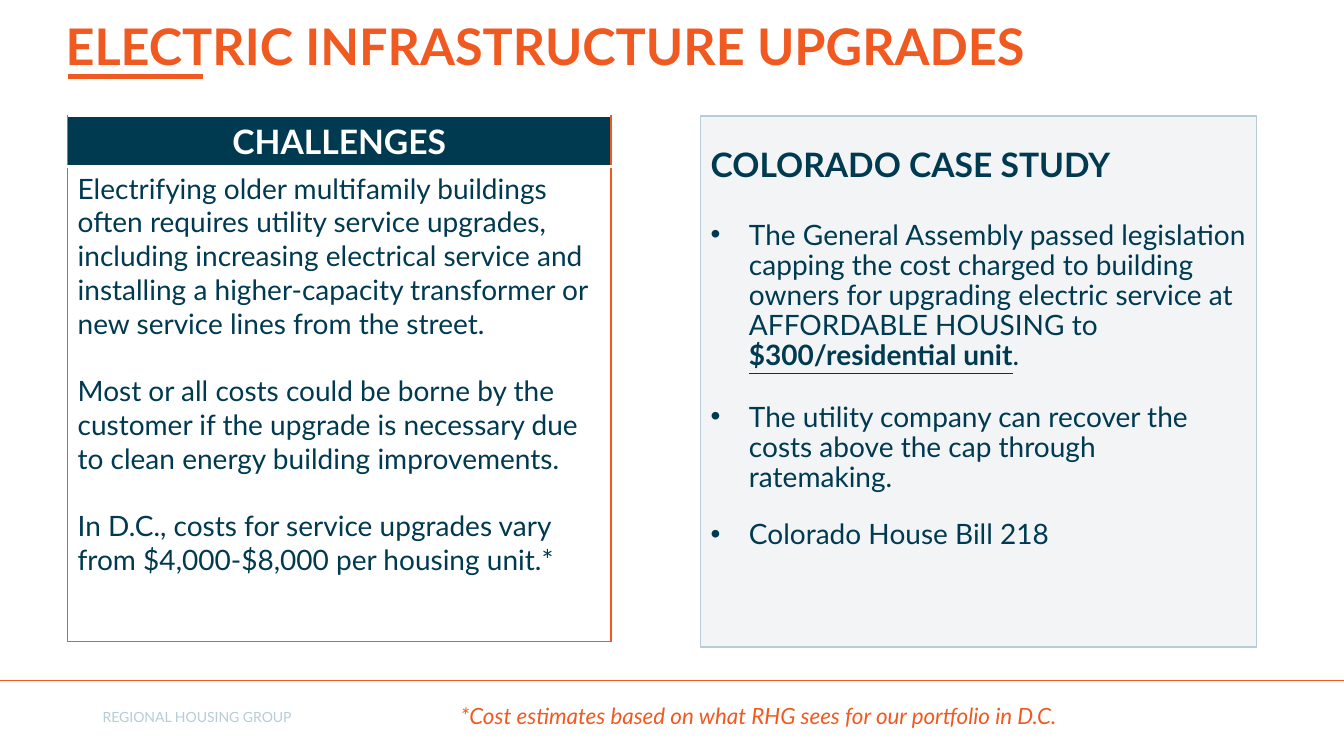
"""Build the slide on electric infrastructure upgrades."""
from dataclasses import dataclass

from lxml.etree import SubElement
from pptx import Presentation
from pptx.dml.color import RGBColor
from pptx.enum.shapes import MSO_CONNECTOR as Connector, MSO_SHAPE as Shape
from pptx.enum.text import MSO_ANCHOR as Anchor, MSO_AUTO_SIZE as AutoSize, PP_ALIGN as Align
from pptx.oxml.ns import qn
from pptx.util import Inches, Pt

COLORS = {"orange": "F05A21", "rule": "F15922", "navy": "003A51",
          "mist": "B6CCD6", "white": "FFFFFF"}
FONT = "Lato"


@dataclass
class Rule:
    left: float
    right: float
    top: float
    color: str
    weight: float


@dataclass
class Label:
    text: str
    box: tuple[float, float, float, float]
    size: float
    color: str
    italic: bool = False


@dataclass
class Bullet:
    runs: list[tuple[str, bool]]
    gap: float


RULES = [Rule(0, 13.33, 6.75, "rule", 0.5), Rule(0.67, 2.01, 0.76, "orange", 3)]
LABELS = [
    Label("REGIONAL HOUSING GROUP", (0.92, 6.95, 4.5, 0.33), 10, "mist"),
    Label("*Cost estimates based on what RHG sees for our portfolio in D.C.",
          (4.47, 6.91, 9.4, 0.37), 16, "orange", True),
]
CHALLENGES = [
    "Electrifying older multifamily buildings often requires utility service upgrades, "
    "including increasing electrical service and installing a higher-capacity transformer "
    "or new service lines from the street.",
    "Most or all costs could be borne by the customer if the upgrade is necessary due to "
    "clean energy building improvements.",
    "In D.C., costs for service upgrades vary from $4,000-$8,000 per housing unit.*",
]
CASE_STUDY = [
    Bullet([("The General Assembly passed legislation capping the cost charged to building "
             "owners for upgrading electric service at AFFORDABLE HOUSING to ", False),
            ("$300/residential unit", True), (".", False)], 26),
    Bullet([("The utility company can recover the costs above the cap through ratemaking.",
             False)], 22),
    Bullet([("Colorado House Bill 218", False)], 19),
]


def rgb(color: str) -> RGBColor:
    """Return a named colour."""
    return RGBColor.from_string(COLORS[color])


def write(paragraph, text: str, *, size: float, color: str, bold: bool = False,
          italic: bool = False, underline: bool = False, align=Align.LEFT,
          spacing: float = 1.0, before: float = 0) -> None:
    """Add formatted text to a paragraph."""
    paragraph.alignment = align
    paragraph.line_spacing = spacing
    paragraph.space_before = Pt(before)
    run = paragraph.add_run()
    run.text = text
    font = run.font
    font.name, font.size = FONT, Pt(size)
    font.bold, font.italic, font.underline = bold, italic, underline
    font.color.rgb = rgb(color)


def add_rule(slide, rule: Rule) -> None:
    """Draw a horizontal rule."""
    line = slide.shapes.add_connector(
        Connector.STRAIGHT, *map(Inches, (rule.left, rule.top, rule.right, rule.top)))
    line.line.color.rgb = rgb(rule.color)
    line.line.width = Pt(rule.weight)
    SubElement(line._element.spPr, qn("a:effectLst"))


def add_label(slide, label: Label) -> None:
    """Add a single-line caption."""
    frame = slide.shapes.add_textbox(*map(Inches, label.box)).text_frame
    frame.word_wrap = True
    frame.vertical_anchor = Anchor.MIDDLE
    write(frame.paragraphs[0], label.text, size=label.size, color=label.color,
          italic=label.italic)


def add_title(slide, text: str) -> None:
    """Place and fill the title."""
    title = slide.shapes.title
    title.left, title.top, title.width, title.height = map(Inches, (0.55, -0.24, 13.33, 1.45))
    title.text_frame.auto_size = AutoSize.NONE
    title.text_frame.vertical_anchor = Anchor.MIDDLE
    write(title.text_frame.paragraphs[0], text, size=36, color="orange", bold=True, spacing=0.9)


def add_case_study(slide, heading: str, bullets: list[Bullet]) -> None:
    """Draw the tinted panel with its heading and bullets."""
    panel = slide.shapes.add_shape(Shape.RECTANGLE, *map(Inches, (6.95, 1.15, 5.51, 5.27)))
    panel.shadow.inherit = False
    panel.fill.solid()
    panel.fill.fore_color.rgb = rgb("navy")
    tint = panel._element.spPr.find(qn("a:solidFill"))[0]
    SubElement(tint, qn("a:alpha"), val="5000")
    panel.line.color.rgb = rgb("mist")
    panel.line.width = Pt(1)
    frame = panel.text_frame
    frame.word_wrap = True
    frame.vertical_anchor = Anchor.TOP
    frame.margin_top = Inches(0.32)
    write(frame.paragraphs[0], heading, size=24, color="navy", bold=True, spacing=0.9)
    for bullet in bullets:
        paragraph = frame.add_paragraph()
        properties = paragraph._p.get_or_add_pPr()
        properties.set("marL", str(Inches(0.38)))
        properties.set("indent", str(-Inches(0.38)))
        SubElement(properties, qn("a:buFont"), typeface="Arial")
        SubElement(properties, qn("a:buChar"), char="•")
        for text, strong in bullet.runs:
            write(paragraph, text, size=20, color="navy", bold=strong, underline=strong,
                  spacing=0.9, before=bullet.gap)


def set_borders(cell, **borders: tuple[str, float]) -> None:
    """Set the cell borders, given as colour and weight by side."""
    properties = cell._tc.get_or_add_tcPr()
    for position, (side, (color, weight)) in enumerate(borders.items()):
        edge = properties.makeelement(qn(f"a:ln{side}"), {"w": str(Pt(weight))})
        properties.insert(position, edge)
        SubElement(SubElement(edge, qn("a:solidFill")), qn("a:srgbClr"), val=COLORS[color])


def add_challenges(slide, heading: str, points: list[str]) -> None:
    """Add the table of challenges."""
    table = slide.shapes.add_table(2, 1, *map(Inches, (0.67, 1.15, 5.39, 5.19))).table
    for row, height in zip(table.rows, (0.48, 4.71)):
        row.height = Inches(height)
    header, body = table.cell(0, 0), table.cell(1, 0)
    header.fill.solid()
    header.fill.fore_color.rgb = rgb("navy")
    body.fill.background()
    side, divider = ("orange", 1), ("white", 3)
    set_borders(header, L=side, R=side, T=("white", 1), B=divider)
    set_borders(body, L=side, R=side, T=divider, B=side)
    write(header.text_frame.paragraphs[0], heading, size=24, color="white", bold=True,
          align=Align.CENTER)
    frame = body.text_frame
    for index, point in enumerate(points):
        paragraph = frame.add_paragraph() if index else frame.paragraphs[0]
        write(paragraph, point, size=20, color="navy", before=24 if index else 0)


def main() -> None:
    """Build and save the slide."""
    deck = Presentation()
    deck.slide_width, deck.slide_height = Inches(13.33), Inches(7.5)
    slide = deck.slides.add_slide(deck.slide_layouts.get_by_name("Title Only"))
    add_title(slide, "ELECTRIC INFRASTRUCTURE UPGRADES")
    for rule in RULES:
        add_rule(slide, rule)
    add_case_study(slide, "COLORADO CASE STUDY", CASE_STUDY)
    for label in LABELS:
        add_label(slide, label)
    add_challenges(slide, "CHALLENGES", CHALLENGES)
    deck.save("out.pptx")


if __name__ == "__main__":
    main()
